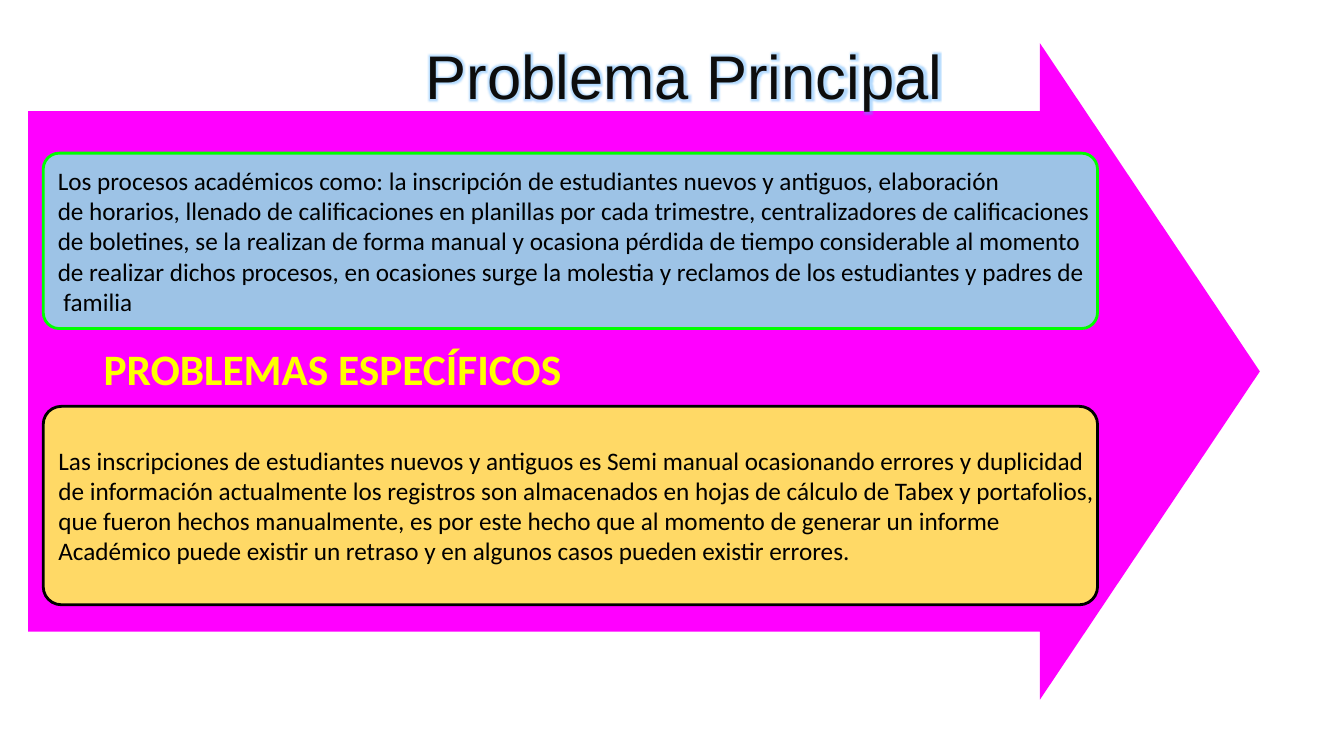
from dataclasses import dataclass

from lxml import etree
from pptx import Presentation
from pptx.dml.color import RGBColor
from pptx.enum.shapes import MSO_SHAPE
from pptx.enum.text import MSO_ANCHOR, PP_ALIGN
from pptx.oxml.ns import qn
from pptx.util import Cm, Pt

ARROW = MSO_SHAPE.RIGHT_ARROW
ROUNDED = MSO_SHAPE.ROUNDED_RECTANGLE
MIDDLE = MSO_ANCHOR.MIDDLE
LEFT, CENTER = PP_ALIGN.LEFT, PP_ALIGN.CENTER
TITLE_ONLY = 5


@dataclass(frozen=True)
class Theme:
    title_font: str = "Arial"
    body_font: str = "Calibri"
    title_size: float = 44
    heading_size: float = 31
    body_size: float = 18
    title_ink: str = "0D0D0D"
    ink: str = "000000"
    heading_ink: str = "FFFF00"
    glow: str = "45A5FF"
    arrow: str = "FF00FF"
    main_fill: str = "9DC3E6"
    main_line: str = "00FF00"
    specific_fill: str = "FFD966"


MAIN_PROBLEM = [
    "Los procesos académicos como: la inscripción de estudiantes nuevos y antiguos, elaboración",
    "de horarios, llenado de calificaciones en planillas por cada trimestre, centralizadores de calificaciones",
    "de boletines, se la realizan de forma manual y ocasiona pérdida de tiempo considerable al momento",
    "de realizar dichos procesos, en ocasiones surge la molestia y reclamos de los estudiantes y padres de",
    " familia",
]
SPECIFIC_PROBLEMS = [
    "Las inscripciones de estudiantes nuevos y antiguos es Semi manual ocasionando errores y duplicidad",
    "de información actualmente los registros son almacenados en hojas de cálculo de Tabex y portafolios,",
    "que fueron hechos manualmente, es por este hecho que al momento de generar un informe",
    "Académico puede existir un retraso y en algunos casos pueden existir errores.",
]


def write(frame, lines, *, font, size, color, bold=False, align=LEFT, spacing=1.0, wrap=True):
    frame.word_wrap = wrap
    frame.vertical_anchor = MIDDLE
    for number, line in enumerate(lines):
        paragraph = frame.add_paragraph() if number else frame.paragraphs[0]
        paragraph.alignment = align
        paragraph.line_spacing = spacing
        run = paragraph.add_run()
        run.text = line
        run.font.name = font
        run.font.size = Pt(size)
        run.font.bold = bold
        run.font.color.rgb = RGBColor.from_string(color)


class Deck:
    def __init__(self, theme):
        self.theme = theme
        self.presentation = Presentation()
        self.presentation.slide_width = Cm(33.87)
        self.presentation.slide_height = Cm(19.05)
        self.slide = self.presentation.slides.add_slide(
            self.presentation.slide_layouts[TITLE_ONLY])

    def title(self, text, left, top, width, height):
        title = self.slide.shapes.title
        title.left, title.top, title.width, title.height = map(Cm, (left, top, width, height))
        write(title.text_frame, [text], font=self.theme.title_font, size=self.theme.title_size,
              color=self.theme.title_ink, align=CENTER, spacing=0.9)
        self.glow(title.text_frame.paragraphs[0].runs[0])

    def glow(self, run):
        effects = etree.Element(qn("a:effectLst"))
        halo = etree.SubElement(effects, qn("a:glow"), rad="63500")
        color = etree.SubElement(halo, qn("a:srgbClr"), val=self.theme.glow)
        etree.SubElement(color, qn("a:alpha"), val="40000")
        run.font._element.find(qn("a:solidFill")).addnext(effects)

    def shape(self, kind, box, adjustments, fill, line=None):
        shape = self.slide.shapes.add_shape(kind, *map(Cm, box))
        shape.shadow.inherit = False
        for number, value in enumerate(adjustments):
            shape.adjustments[number] = value
        shape.fill.solid()
        shape.fill.fore_color.rgb = RGBColor.from_string(fill)
        if line:
            shape.line.color.rgb = RGBColor.from_string(line)
            shape.line.width = Pt(2)
        else:
            shape.line.fill.background()
        return shape

    def backdrop_arrow(self, left, top, width, height):
        arrow = self.shape(ARROW, (left, top, width, height), (0.793, 0.335), self.theme.arrow)
        self.slide.shapes.title._element.addprevious(arrow._element)

    def panel(self, lines, top, height, fill, line):
        panel = self.shape(ROUNDED, (1.09, top, 26.57, height), (0.091,), fill, line)
        write(panel.text_frame, lines, font=self.theme.body_font, size=self.theme.body_size,
              color=self.theme.ink, wrap=False)

    def heading(self, text, left, top, width, height):
        heading = self.slide.shapes.add_textbox(*map(Cm, (left, top, width, height)))
        write(heading.text_frame, [text], font=self.theme.body_font, size=self.theme.heading_size,
              color=self.theme.heading_ink, bold=True, spacing=0.9)


def main():
    theme = Theme()
    deck = Deck(theme)
    deck.backdrop_arrow(0.71, 1.09, 31.04, 16.54)
    deck.title("Problema Principal", 1.4, 0.79, 31.7, 2.44)
    deck.panel(MAIN_PROBLEM, 3.86, 4.42, theme.main_fill, theme.main_line)
    deck.panel(SPECIFIC_PROBLEMS, 10.24, 5, theme.specific_fill, theme.ink)
    deck.heading("PROBLEMAS ESPECÍFICOS", 2.36, 7.92, 17.7, 2.87)
    deck.presentation.save("out.pptx")


if __name__ == "__main__":
    main()
